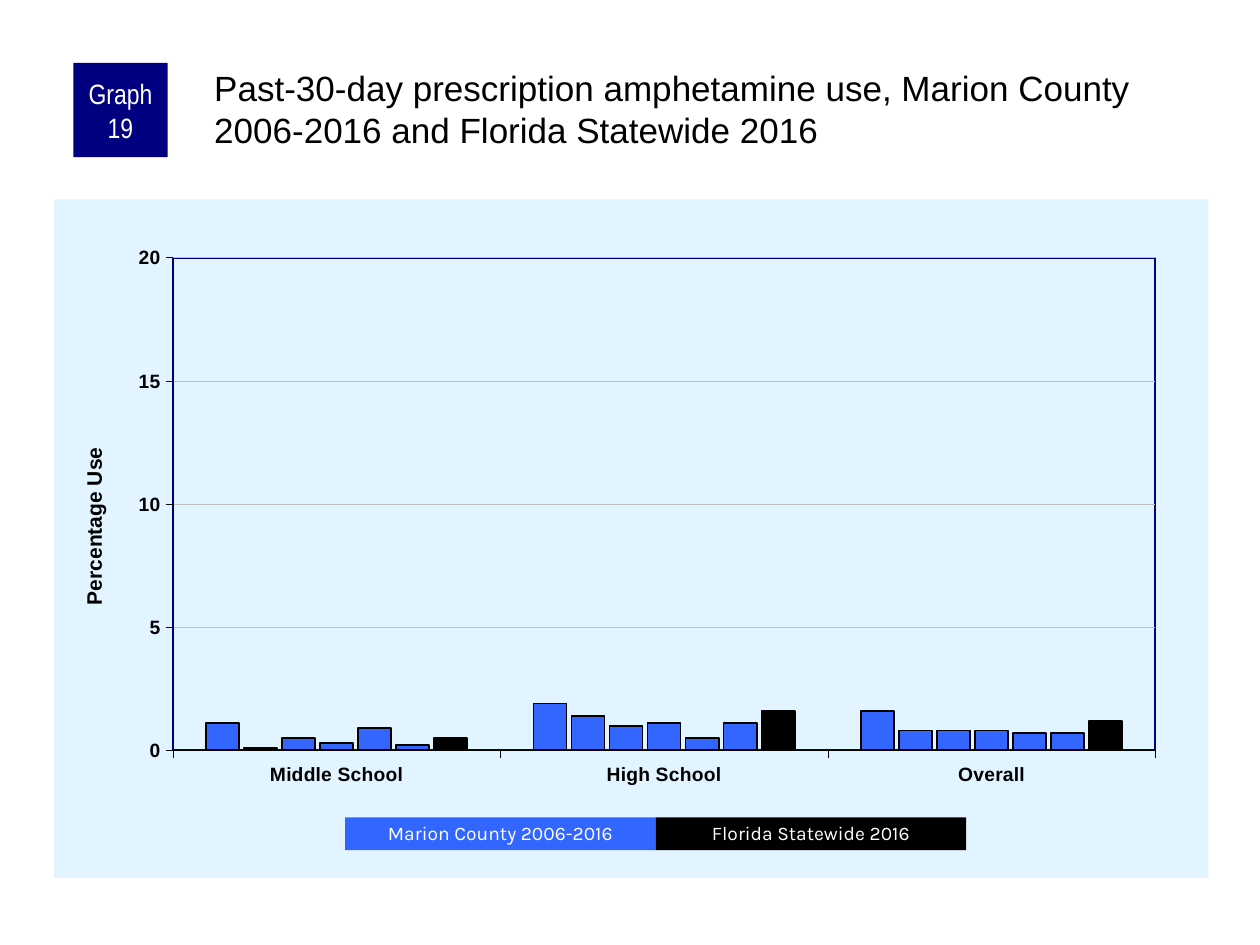
import pptx
import pptx.chart.data
import pptx.dml.color
import pptx.enum.chart
import pptx.enum.shapes
import pptx.enum.text
import pptx.oxml
import pptx.util
from pptx.util import Cm, Pt

RGB = pptx.dml.color.RGBColor
BLACK = RGB(0x00, 0x00, 0x00)
WHITE = RGB(0xFF, 0xFF, 0xFF)
NAVY = RGB(0x00, 0x00, 0x80)
BLUE = RGB(0x33, 0x66, 0xFF)
PALE = RGB(0xE1, 0xF4, 0xFF)
GREY = RGB(0xC0, 0xC0, 0xC0)

TITLE = "Past-30-day prescription amphetamine use, Marion County 2006-2016 and Florida Statewide 2016"
BADGE = "Graph 19"
AXIS_TITLE = "Percentage Use"
CATEGORIES = ["Middle School", "High School", "Overall"]
SERIES = [
    (BLUE, (1.1, 1.9, 1.6)),
    (BLUE, (0.1, 1.4, 0.8)),
    (BLUE, (0.5, 1.0, 0.8)),
    (BLUE, (0.3, 1.1, 0.8)),
    (BLUE, (0.9, 0.5, 0.7)),
    (BLUE, (0.2, 1.1, 0.7)),
    (BLACK, (0.5, 1.6, 1.2)),
]
LEGEND = [("Marion County 2006-2016", BLUE), ("Florida Statewide 2016", BLACK)]
LEGEND_LEFT, LEGEND_TOP, LEGEND_W, LEGEND_H = 6.96, 16.48, 6.26, 0.66

NS = ('xmlns:c="http://schemas.openxmlformats.org/drawingml/2006/chart" '
      'xmlns:a="http://schemas.openxmlformats.org/drawingml/2006/main"')


def add_text(sp, text, font="Arial", size=11, color=WHITE, align="CENTER",
             anchor="MIDDLE", spacing=None, insets=(0.25, 0.13, 0.25, 0.13)):
    tf = sp.text_frame
    tf.word_wrap = True
    tf.vertical_anchor = getattr(pptx.enum.text.MSO_ANCHOR, anchor)
    tf.margin_left, tf.margin_top, tf.margin_right, tf.margin_bottom = map(Cm, insets)
    p = tf.paragraphs[0]
    p.alignment = getattr(pptx.enum.text.PP_ALIGN, align)
    p.line_spacing = spacing
    r = p.add_run()
    r.text = text
    set_font(r.font, font, size, color)


def set_font(f, name, size, color, bold=False):
    f.name, f.size, f.bold = name, Pt(size), bold
    f.color.rgb = color


def set_line(line, color, width):
    line.color.rgb = color
    line.width = Pt(width)


def add_box(s, left, top, width, height, color):
    sp = s.shapes.add_shape(pptx.enum.shapes.MSO_SHAPE.RECTANGLE,
                            Cm(left), Cm(top), Cm(width), Cm(height))
    sp.shadow.inherit = False
    sp.fill.solid()
    sp.fill.fore_color.rgb = color
    sp.line.fill.background()
    return sp


def layout(target="", **values):
    inner = f'<c:layoutTarget val="{target}"/>' if target else ""
    inner += "".join(f'<c:{k}Mode val="edge"/>' for k in "xy")
    inner += "".join(f'<c:{k} val="{v}"/>' for k, v in values.items())
    return pptx.oxml.parse_xml(
        f"<c:layout {NS}><c:manualLayout>{inner}</c:manualLayout></c:layout>")


def area_format(fill, line=None):
    def solid(color):
        return f'<a:solidFill><a:srgbClr val="{color}"/></a:solidFill>' if color else "<a:noFill/>"
    return pptx.oxml.parse_xml(
        f'<c:spPr {NS}>{solid(fill)}<a:ln w="12700">{solid(line)}</a:ln></c:spPr>')


def add_usage_chart(s):
    data = pptx.chart.data.CategoryChartData()
    data.categories = CATEGORIES
    for i, (_, values) in enumerate(SERIES, 1):
        data.add_series(f"Series {i}", values)
    chart = s.shapes.add_chart(pptx.enum.chart.XL_CHART_TYPE.COLUMN_CLUSTERED,
                               Cm(1.09), Cm(4.02), Cm(23.27), Cm(13.68), data).chart
    chart.has_legend = chart.has_title = False
    set_font(chart.font, "Arial", 8, BLACK)

    plot = chart.plots[0]
    plot.gap_width, plot.overlap, plot.vary_by_categories = 200, -15, False
    for series, (color, _) in zip(plot.series, SERIES):
        series.format.fill.solid()
        series.format.fill.fore_color.rgb = color
        set_line(series.format.line, BLACK, 1)

    for axis in (chart.category_axis, chart.value_axis):
        axis.major_tick_mark = pptx.enum.chart.XL_TICK_MARK.OUTSIDE
        axis.minor_tick_mark = pptx.enum.chart.XL_TICK_MARK.NONE
        set_font(axis.tick_labels.font, "Arial", 11, BLACK, bold=True)
        set_line(axis.format.line, BLACK, 0.25)

    axis = chart.value_axis
    axis.minimum_scale, axis.maximum_scale, axis.major_unit = 0, 20, 5
    axis.tick_labels.number_format = "0"
    axis.tick_labels.number_format_is_linked = False
    axis.has_major_gridlines = True
    set_line(axis.major_gridlines.format.line, GREY, 0.25)
    axis.has_title = True
    p = axis.axis_title.text_frame.paragraphs[0]
    r = p.add_run()
    r.text = AXIS_TITLE
    set_font(r.font, "Arial", 12, BLACK, bold=True)

    root = chart.element
    title = root.find(".//{*}valAx/{*}title")
    area = root.find(".//{*}plotArea")
    for parent in (title, area):
        for old in parent.findall("{*}layout"):
            parent.remove(old)
    title.find("{*}tx").addnext(layout(x=0.02, y=0.36))
    area.insert(0, layout("inner", x=0.103, y=0.086, w=0.851, h=0.726))
    area.append(area_format(None, NAVY))
    root.find("{*}chart").addnext(area_format(PALE))


prs = pptx.Presentation()
prs.slide_width, prs.slide_height = Cm(25.4), Cm(19.05)
s = prs.slides.add_slide(prs.slide_layouts[6])

add_usage_chart(s)
add_text(add_box(s, 1.48, 1.27, 1.9, 1.9, NAVY), BADGE, font="Arial Narrow", size=16,
         insets=(0.13, 0, 0.13, 0))
add_text(s.shapes.add_textbox(Cm(4.24), Cm(1.27), Cm(20.12), Cm(2.11)), TITLE, size=20,
         color=BLACK, align="LEFT", anchor="TOP", insets=(0.08, 0.08, 0, 0))
for i, (label, color) in enumerate(LEGEND):
    sp = add_box(s, LEGEND_LEFT + i * LEGEND_W, LEGEND_TOP, LEGEND_W, LEGEND_H, color)
    add_text(sp, label, font="Karla", spacing=0.9)

prs.save("out.pptx")
